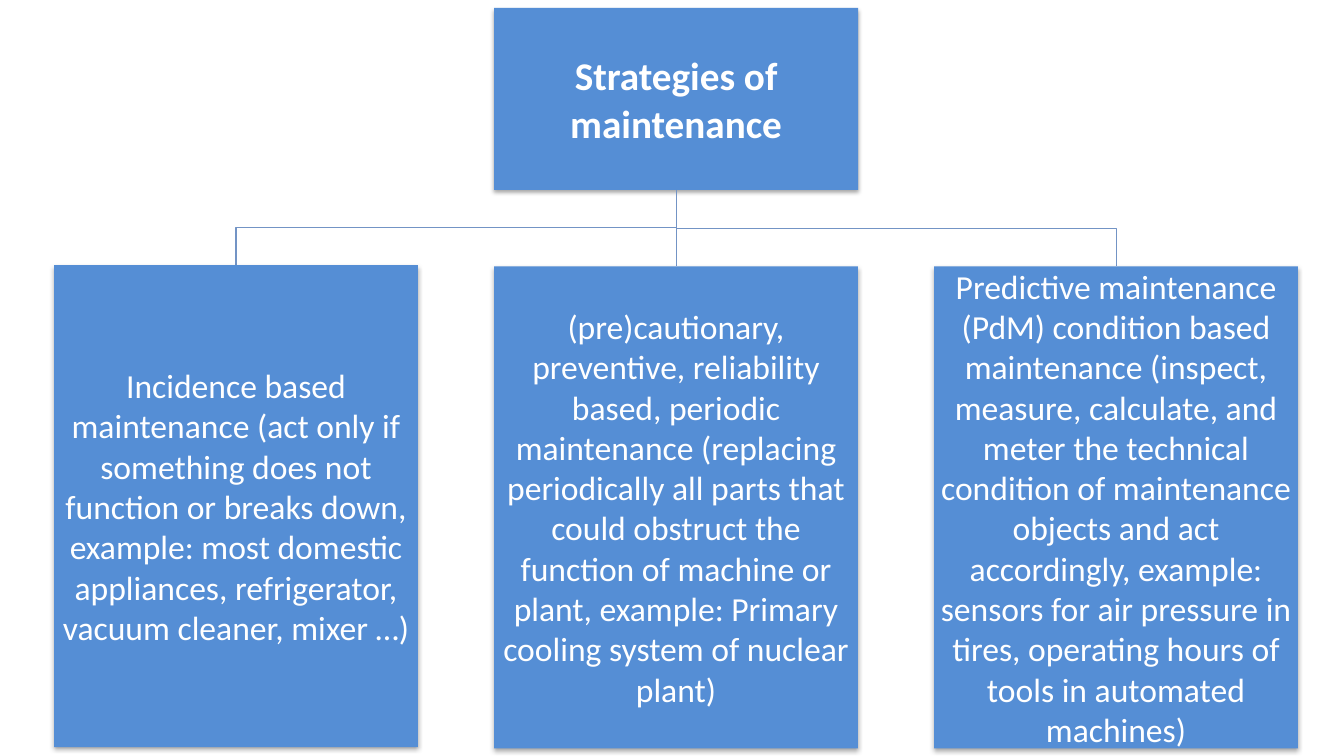
from lxml.etree import SubElement
from pptx import Presentation
from pptx.dml.color import RGBColor
from pptx.enum.shapes import MSO_CONNECTOR, MSO_SHAPE
from pptx.enum.text import MSO_ANCHOR, MSO_AUTO_SIZE, PP_ALIGN
from pptx.oxml.ns import qn
from pptx.util import Pt


def color(hex_value):
    return RGBColor.from_string(hex_value)


def fill_box(shape, text, size=24, bold=False, fill="558ED5", ink="FFFFFF"):
    shape.fill.solid()
    shape.fill.fore_color.rgb = color(fill)
    shape.line.fill.background()
    shape.shadow.inherit = False
    effects = shape.element.spPr.find(qn("a:effectLst"))
    shadow = SubElement(effects, qn("a:outerShdw"), blurRad=str(Pt(3.1)),
                        dist=str(Pt(1.8)), dir="5400000", rotWithShape="0")
    shadow_color = SubElement(shadow, qn("a:srgbClr"), val="000000")
    SubElement(shadow_color, qn("a:alpha"), val="35000")

    frame = shape.text_frame
    frame.word_wrap = True
    frame.auto_size = MSO_AUTO_SIZE.NONE
    frame.vertical_anchor = MSO_ANCHOR.MIDDLE
    frame.margin_left = frame.margin_right = Pt(1.4)
    frame.margin_top = frame.margin_bottom = Pt(1.4)
    paragraph = frame.paragraphs[0]
    paragraph.alignment = PP_ALIGN.CENTER
    paragraph.space_after = Pt(6)
    run = paragraph.add_run()
    run.text = text
    run.font.name = "Calibri"
    run.font.size = Pt(size)
    run.font.bold = bold
    run.font.color.rgb = color(ink)


presentation = Presentation()
presentation.slide_width = Pt(960)
presentation.slide_height = Pt(540)
slide = presentation.slides.add_slide(presentation.slide_layouts[5])

box_width = 260
column_step = 314.3
first_left = 38.6
title_left = first_left + column_step
title_top, title_height = 5.6, 130
title_bottom = title_top + title_height
title_center = title_left + box_width / 2
strategy_height = 344.2

title = slide.shapes.title
title.left, title.top = Pt(title_left), Pt(title_top)
title.width, title.height = Pt(box_width), Pt(title_height)
fill_box(title, "Strategies of maintenance", size=28, bold=True)

strategies = [
    (189.4, "Incidence based maintenance (act only if something does not function "
            "or breaks down, example: most domestic appliances, refrigerator, "
            "vacuum cleaner, mixer …)"),
    (190.3, "(pre)cautionary, preventive, reliability based, periodic maintenance "
            "(replacing periodically all parts that could obstruct the function of "
            "machine or plant, example: Primary cooling system of nuclear plant)"),
    (190.3, "Predictive maintenance (PdM) condition based maintenance (inspect, "
            "measure, calculate, and meter the technical condition of maintenance "
            "objects and act accordingly, example: sensors for air pressure in "
            "tires, operating hours of tools in automated machines)"),
]

for column, (top, text) in enumerate(strategies):
    left = first_left + column * column_step
    center = left + box_width / 2
    middle = (title_bottom + top) / 2

    if column == 1:
        branch = slide.shapes.add_connector(
            MSO_CONNECTOR.STRAIGHT, Pt(center), Pt(title_bottom), Pt(center), Pt(top))
        branch.line.width = Pt(0.75)
        SubElement(branch.element.spPr, qn("a:effectLst"))
    else:
        builder = slide.shapes.build_freeform(Pt(title_center), Pt(title_bottom))
        corners = [(title_center, middle), (center, middle), (center, top)]
        builder.add_line_segments([(Pt(x), Pt(y)) for x, y in corners], close=False)
        branch = builder.convert_to_shape()
        branch.fill.background()
        branch.shadow.inherit = False
        branch.line.width = Pt(0.75)
    branch.line.color.rgb = color("7394C5")

    box = slide.shapes.add_shape(
        MSO_SHAPE.RECTANGLE, Pt(left), Pt(top), Pt(box_width), Pt(strategy_height))
    fill_box(box, text)

presentation.save("out.pptx")
